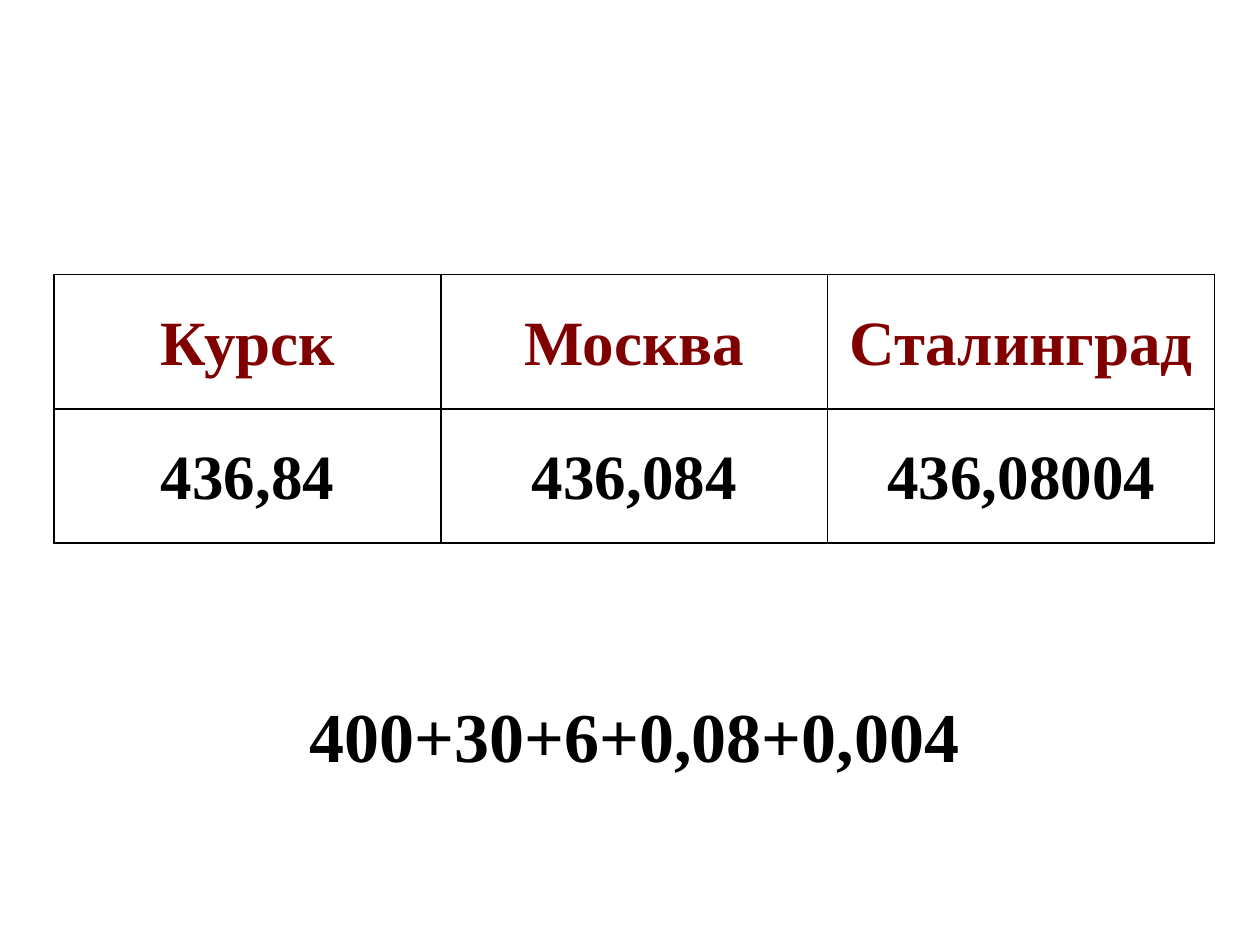
from pptx import Presentation
from pptx.dml.color import RGBColor
from pptx.enum import text
from pptx.oxml import parse_xml
from pptx.oxml.ns import nsdecls
from pptx.util import Inches, Pt

BLACK = RGBColor(0x00, 0x00, 0x00)
MAROON = RGBColor(0x80, 0x00, 0x00)

LEFT, WIDTH, HEIGHT = Inches(0.43), Inches(9.21), Inches(2.13)
CITIES = ["Курск", "Москва", "Сталинград"]
NUMBERS = ["436,84", "436,084", "436,08004"]


def apply_format(target, values):
    for name, value in values.items():
        setattr(target, name, value)


def write_line(frame, content, size, color):
    paragraph = frame.paragraphs[0]
    paragraph.text = content
    apply_format(paragraph, {
        "alignment": text.PP_ALIGN.CENTER,
        "line_spacing": 1.5,
        "space_before": Pt(0),
    })
    font = paragraph.runs[0].font
    apply_format(font, {"name": "Times New Roman", "size": Pt(size), "bold": True})
    font.color.rgb = color


def add_borders(cell):
    properties = cell._tc.get_or_add_tcPr()
    for position, side in enumerate(("lnL", "lnR", "lnT", "lnB")):
        # Border lines must come before the cell's fill
        properties.insert(position, parse_xml(
            f'<a:{side} {nsdecls("a")} w="{Pt(1)}"><a:solidFill>'
            f'<a:srgbClr val="{BLACK}"/></a:solidFill></a:{side}>'))


def add_city_table(slide, top):
    rows = [(CITIES, MAROON), (NUMBERS, BLACK)]
    frame = slide.shapes.add_table(len(rows), len(CITIES), LEFT, top, WIDTH, HEIGHT)
    table = frame.table
    apply_format(table, {"first_row": False, "horz_banding": False})
    for row_index, (entries, color) in enumerate(rows):
        for column_index, entry in enumerate(entries):
            cell = table.cell(row_index, column_index)
            apply_format(cell, {
                "margin_left": Inches(0.07), "margin_right": Inches(0.07),
                "margin_top": 0, "margin_bottom": 0,
                "vertical_anchor": text.MSO_ANCHOR.TOP,
            })
            cell.fill.background()
            add_borders(cell)
            write_line(cell.text_frame, entry, 36, color)


def add_expansion(slide, top):
    frame = slide.shapes.add_textbox(LEFT, top, WIDTH, HEIGHT).text_frame
    apply_format(frame, {"word_wrap": True, "margin_top": Inches(0.15)})
    write_line(frame, "400+30+6+0,08+0,004", 40, BLACK)


def main():
    presentation = Presentation()
    apply_format(presentation, {"slide_width": Inches(10), "slide_height": Inches(7.5)})
    slide = presentation.slides.add_slide(presentation.slide_layouts[6])

    # Sum of place values below the table of cities
    add_expansion(slide, Inches(5.01))
    add_city_table(slide, Inches(2.18))

    presentation.save("out.pptx")


if __name__ == "__main__":
    main()
